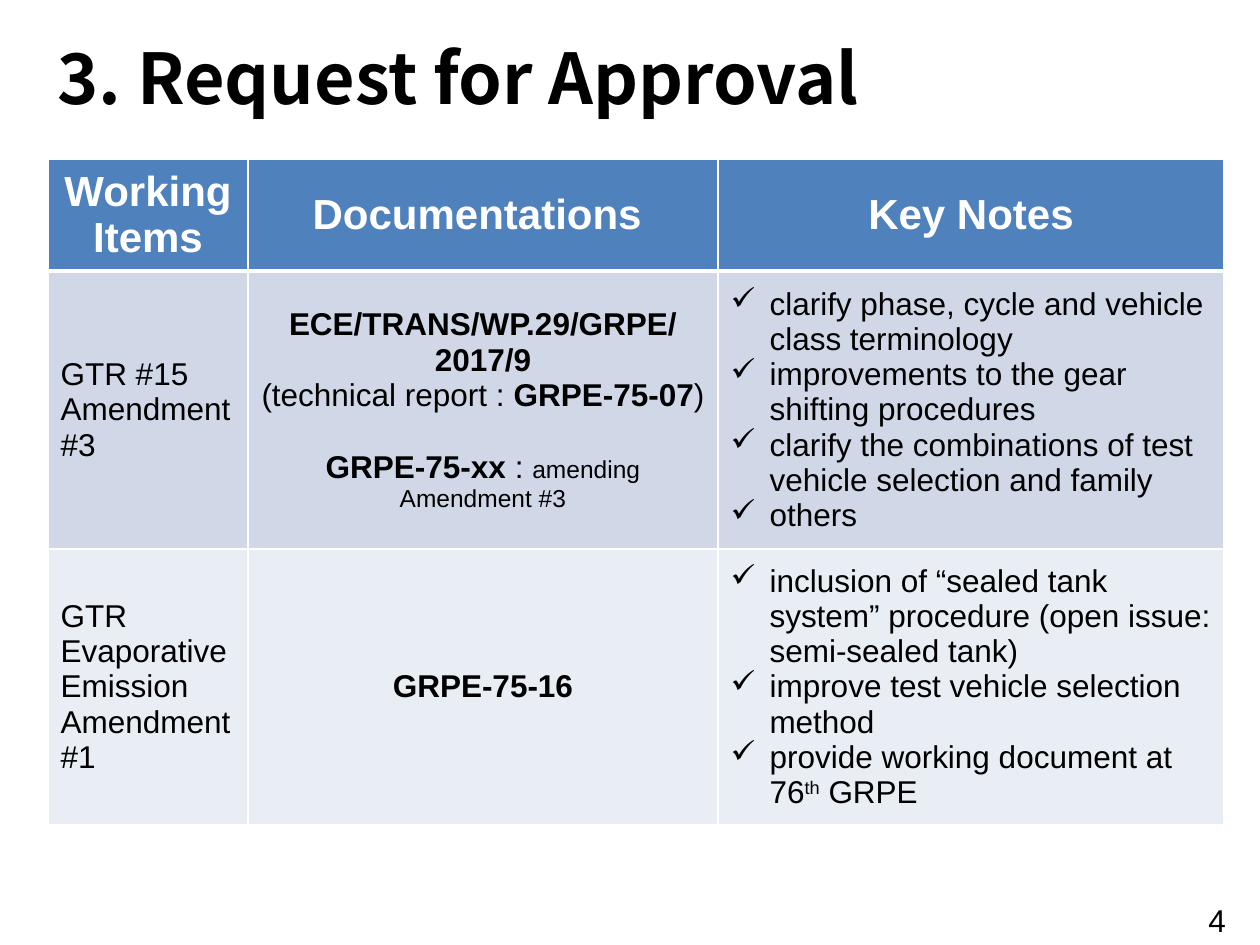
import dataclasses

import lxml.etree
import pptx
import pptx.dml.color
import pptx.enum.text
import pptx.oxml.ns
import pptx.util

ALIGN = pptx.enum.text.PP_ALIGN
MIDDLE = pptx.enum.text.MSO_ANCHOR.MIDDLE
FIXED = pptx.enum.text.MSO_AUTO_SIZE.NONE


@dataclasses.dataclass(frozen=True)
class Theme:
    """Hold the colours, fonts and type sizes."""
    black: str = "000000"
    white: str = "FFFFFF"
    blue: str = "4F81BD"
    bands: tuple = ("D0D8E8", "E9EDF4")
    font: str = "Arial"
    display: str = "Noto Sans CJK JP"
    title: int = 40
    head: int = 24
    body: int = 18
    note: int = 14


THEME = Theme()
BOLD = {"bold": True}
HEADS = [["Working", "Items"], ["Documentations "], ["Key Notes"]]
ROWS = [
    (
        ["GTR #15", "Amendment #3"],
        [
            [("ECE/TRANS/WP.29/GRPE/2017/9", BOLD)],
            ["(technical report : ", ("GRPE-75-07", BOLD), ")"],
            [("GRPE-75-xx ", BOLD), ": ",
             ("amending Amendment #3", {"size": THEME.note})],
        ],
        [
            "clarify phase, cycle and vehicle class terminology",
            "improvements to the gear shifting procedures",
            "clarify the combinations of test vehicle selection and family",
            "others",
        ],
    ),
    (
        ["GTR Evaporative Emission Amendment#1"],
        [[("GRPE-75-16", BOLD)]],
        [
            "inclusion of “sealed tank system” procedure "
            "(open issue: semi-sealed tank)",
            "improve test vehicle selection method",
            ["provide working document at 76", ("th", {"base": 30}), " GRPE"],
        ],
    ),
]


def px(count):
    """Turn pixels into EMU."""
    return pptx.util.Emu(round(count * 914400 / 126))


def node(parent, tag, **attrs):
    """Add a drawing element to a parent."""
    return lxml.etree.SubElement(parent, pptx.oxml.ns.qn(tag), **attrs)


def style(run, size, color, font, bold=False, base=0):
    """Format one run."""
    run.font.size = pptx.util.Pt(size)
    run.font.name = font
    run.font.bold = bold
    run.font.color.rgb = pptx.dml.color.RGBColor.from_string(color)
    if base:
        run.font.size = pptx.util.Pt(size)
        run._r.get_or_add_rPr().set("baseline", str(base * 1000))


def write(frame, lines, align=ALIGN.LEFT, bullet=None, **look):
    """Fill a text frame with formatted paragraphs."""
    base = {"size": THEME.body, "color": THEME.black, "font": THEME.font} | look
    for i, line in enumerate(lines):
        para = frame.paragraphs[0] if i == 0 else frame.add_paragraph()
        para.alignment = align
        for part in [line] if isinstance(line, str) else line:
            text, extra = (part, {}) if isinstance(part, str) else part
            run = para.add_run()
            run.text = text
            style(run, **(base | extra))
        if bullet:
            props = para._p.get_or_add_pPr()
            props.set("marL", str(px(39)))
            props.set("indent", str(-px(39)))
            node(props, "a:buChar", char=bullet)


def paint(cell, fill, top=1, base=1):
    """Set the borders, fill and anchor of a cell."""
    props = cell._tc.get_or_add_tcPr()
    for side, width in zip("LRTB", (1, 1, top, base)):
        line = node(props, "a:ln" + side, w=str(pptx.util.Pt(width)))
        node(node(line, "a:solidFill"), "a:srgbClr", val=THEME.white)
    cell.fill.solid()
    cell.fill.fore_color.rgb = pptx.dml.color.RGBColor.from_string(fill)
    cell.vertical_anchor = MIDDLE


def heading(slide, left, top, width, height):
    """Place the slide title."""
    title = slide.shapes.title
    title.left, title.top, title.width, title.height = map(
        px, (left, top, width, height))
    frame = title.text_frame
    frame.auto_size = FIXED
    frame.word_wrap = False
    frame.vertical_anchor = MIDDLE
    write(frame, ["3. Request for Approval"],
          size=THEME.title, font=THEME.display, bold=True)


def grid(slide, left, top, cols, rows):
    """Place the table of working items."""
    box = map(px, (left, top, sum(cols), sum(rows)))
    table = slide.shapes.add_table(len(rows), len(cols), *box).table
    for col, width in zip(table.columns, cols):
        col.width = px(width)
    for row, height in zip(table.rows, rows):
        row.height = px(height)
    for i, lines in enumerate(HEADS):
        cell = table.cell(0, i)
        paint(cell, THEME.blue, base=3)
        write(cell.text_frame, lines, align=ALIGN.CENTER,
              size=THEME.head, color=THEME.white, bold=True)
    looks = ({}, {"align": ALIGN.CENTER}, {"bullet": "✓"})
    for i, (texts, fill) in enumerate(zip(ROWS, THEME.bands), 1):
        for j, (lines, look) in enumerate(zip(texts, looks)):
            cell = table.cell(i, j)
            paint(cell, fill, top=3 if i == 1 else 1)
            write(cell.text_frame, lines, **look)
    report = table.cell(1, 1).text_frame.paragraphs[-1]
    report.space_before = pptx.util.Pt(21)


def folio(slide, left, top, width, height):
    """Place the page number."""
    box = slide.shapes.add_textbox(*map(px, (left, top, width, height)))
    box.text_frame.word_wrap = False
    write(box.text_frame, ["4"])


def main():
    """Build and save the slide."""
    deck = pptx.Presentation()
    deck.slide_width, deck.slide_height = px(1260), px(945)
    slide = deck.slides.add_slide(deck.slide_layouts.get_by_name("Title Only"))
    heading(slide, 45, 28, 934, 97)
    grid(slide, 48, 159, cols=(200, 470, 506), rows=(112, 278, 276))
    folio(slide, 1196, 895, 64, 50)
    deck.save("out.pptx")


if __name__ == "__main__":
    main()
